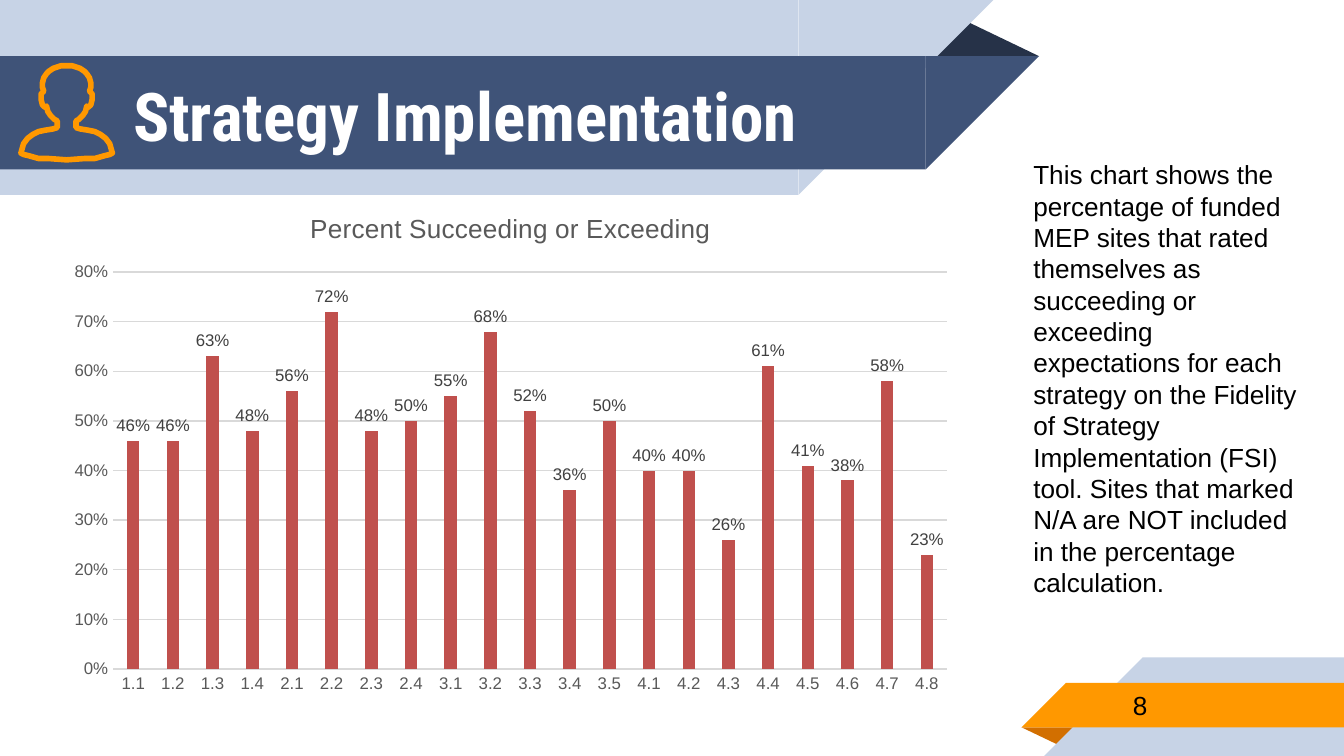
import pptx
import pptx.chart.data
import pptx.dml.color
import pptx.enum.chart
import pptx.enum.shapes
import pptx.enum.text
import pptx.util

Pt = pptx.util.Pt
RGBColor = pptx.dml.color.RGBColor
Preset = pptx.enum.shapes.MSO_SHAPE
Anchor = pptx.enum.text.MSO_ANCHOR
AutoSize = pptx.enum.text.MSO_AUTO_SIZE

WHITE = RGBColor(0xFF, 0xFF, 0xFF)
BLACK = RGBColor(0, 0, 0)
PALE_BLUE = RGBColor(0xC7, 0xD3, 0xE6)
BLUE = RGBColor(0x3F, 0x53, 0x78)
NAVY = RGBColor(0x26, 0x32, 0x48)
ORANGE = RGBColor(0xFF, 0x98, 0x00)
DARK_ORANGE = RGBColor(0xD2, 0x6F, 0x00)
RED = RGBColor(0xC0, 0x50, 0x4D)
GREY = RGBColor(0x59, 0x59, 0x59)
LABEL_GREY = RGBColor(0x40, 0x40, 0x40)
GRID_GREY = RGBColor(0xD9, 0xD9, 0xD9)

CHART_TITLE = "Percent Succeeding or Exceeding"
STRATEGIES_PER_GOAL = (4, 4, 5, 8)
PERCENTAGES = (46, 46, 63, 48, 56, 72, 48, 50, 55, 68, 52,
               36, 50, 40, 40, 26, 61, 41, 38, 58, 23)
EXPLANATION = (
    "This chart shows the percentage of funded MEP sites that rated themselves "
    "as succeeding or exceeding expectations for each strategy on the Fidelity "
    "of Strategy Implementation (FSI) tool. Sites that marked N/A are NOT "
    "included in the percentage calculation."
)
PERSON_HALF = (
    (0, 0), (4, 0), (7, 1), (10, 2), (13, 4), (15, 6), (17, 9), (18, 13),
    (18, 16), (17, 19), (19, 21), (19, 25), (18, 29), (16, 31), (15, 30),
    (14, 34), (12, 37), (9, 40), (7, 41), (7, 46), (10, 47), (16, 48),
    (21, 49), (25, 51), (29, 54), (32, 58), (34, 65), (32, 66), (28, 67),
    (21, 69), (14, 69), (0, 70),
)


def add_piece(slide, preset, left, top, width, height, color, rotation=0):
    shape = slide.shapes.add_shape(preset, Pt(left), Pt(top), Pt(width), Pt(height))
    shape.shadow.inherit = False
    shape.fill.solid()
    shape.fill.fore_color.rgb = color
    shape.line.fill.background()
    shape.rotation = rotation
    return shape


def add_fold(slide, left, top, width, height, color, rotation=0):
    fold = add_piece(slide, Preset.ISOSCELES_TRIANGLE, left, top, width, height,
                     color, rotation)
    fold.adjustments[0] = 0.32


def add_left_band(slide, left, top, width, height, color):
    body = width - height
    add_piece(slide, Preset.RECTANGLE, left, top, body, height, color)
    add_piece(slide, Preset.RIGHT_TRIANGLE, left + body, top, height, height, color, 90)


def add_right_band(slide, left, top, width, height, color):
    add_piece(slide, Preset.RECTANGLE, left + height, top, width - height, height, color)
    add_piece(slide, Preset.RIGHT_TRIANGLE, left, top, height, height, color, 270)


def add_person(slide, left, top, width):
    unit = width / 68
    mirrored = [(-x, y) for x, y in reversed(PERSON_HALF[1:-1])]
    points = [(34 + x, y) for x, y in (*PERSON_HALF, *mirrored)]
    builder = slide.shapes.build_freeform(*points[0], scale=Pt(unit))
    builder.add_line_segments(points[1:], close=True)
    person = builder.convert_to_shape(Pt(left), Pt(top))
    person.shadow.inherit = False
    person.fill.background()
    person.line.color.rgb = ORANGE
    person.line.width = Pt(3)


def add_header(slide, left, top, width, height):
    add_fold(slide, left + width - 61.2, top + 10.1, 61.2, 20, NAVY)
    add_left_band(slide, left, top, width - 24.4, height, PALE_BLUE)
    add_left_band(slide, left, top + 30.1, width, 60.7, BLUE)

    title = slide.shapes.title
    title.element.getparent().append(title.element)
    title.left, title.top = Pt(left + 64.1), Pt(top + 31)
    title.width, title.height = Pt(432.7), Pt(60.5)
    title.text = "Strategy Implementation"
    frame = title.text_frame
    frame.auto_size = AutoSize.NONE
    frame.vertical_anchor = Anchor.MIDDLE
    frame.margin_left = frame.margin_right = Pt(7.2)
    frame.margin_top = frame.margin_bottom = Pt(7.2)
    paragraph = frame.paragraphs[0]
    paragraph.alignment = pptx.enum.text.PP_ALIGN.LEFT
    paragraph.font.name = "Roboto Condensed"
    paragraph.font.size = Pt(36)
    paragraph.font.bold = True
    paragraph.font.color.rgb = WHITE

    add_person(slide, left + 11.2, top + 35.2, 49)


def add_body_text(slide, text, left, top, width, height):
    box = slide.shapes.add_textbox(Pt(left), Pt(top), Pt(width), Pt(height))
    frame = box.text_frame
    frame.word_wrap = True
    frame.text = text
    font = frame.paragraphs[0].font
    font.name = "Arial"
    font.size = Pt(14)
    font.color.rgb = BLACK
    return frame


def add_footer(slide, left, top, width, height):
    add_fold(slide, left, top + 37.4, 31, 10.1, DARK_ORANGE, 180)
    add_right_band(slide, left + 12.2, top, width - 12.2, height, PALE_BLUE)
    add_right_band(slide, left, top + 13.7, width, 23.8, ORANGE)
    frame = add_body_text(slide, "8", left + 52.6, top + 13, 117.4, 25.2)
    frame.vertical_anchor = Anchor.MIDDLE


def set_font(font, size, color):
    font.name = "Arial"
    font.size = Pt(size)
    font.bold = False
    font.color.rgb = color


def add_strategy_chart(slide, left, top, width, height):
    data = pptx.chart.data.CategoryChartData(number_format="0%")
    data.categories = [f"{goal}.{strategy}"
                       for goal, count in enumerate(STRATEGIES_PER_GOAL, 1)
                       for strategy in range(1, count + 1)]
    data.add_series(CHART_TITLE, [value / 100 for value in PERCENTAGES])
    chart = slide.shapes.add_chart(
        pptx.enum.chart.XL_CHART_TYPE.COLUMN_CLUSTERED,
        Pt(left), Pt(top), Pt(width), Pt(height), data).chart
    set_font(chart.font, 10, BLACK)
    chart.has_legend = False
    chart.has_title = True
    chart.chart_title.include_in_layout = False
    chart.chart_title.text_frame.text = CHART_TITLE
    set_font(chart.chart_title.text_frame.paragraphs[0].font, 14, GREY)

    for axis in (chart.category_axis, chart.value_axis):
        axis.major_tick_mark = pptx.enum.chart.XL_TICK_MARK.NONE
        axis.minor_tick_mark = pptx.enum.chart.XL_TICK_MARK.NONE
        set_font(axis.tick_labels.font, 9, GREY)
    values = chart.value_axis
    values.minimum_scale, values.maximum_scale, values.major_unit = 0, 0.8, 0.1
    values.tick_labels.number_format = "0%"
    values.tick_labels.number_format_is_linked = False
    values.format.line.fill.background()
    for line in (chart.category_axis.format.line, values.major_gridlines.format.line):
        line.color.rgb = GRID_GREY
        line.width = Pt(0.75)

    plot = chart.plots[0]
    plot.gap_width, plot.overlap = 219, -27
    plot.vary_by_categories = False
    fill = plot.series[0].format.fill
    fill.solid()
    fill.fore_color.rgb = RED
    plot.has_data_labels = True
    labels = plot.data_labels
    labels.show_value = True
    labels.number_format = "0%"
    labels.number_format_is_linked = False
    labels.position = pptx.enum.chart.XL_LABEL_POSITION.OUTSIDE_END
    set_font(labels.font, 9, LABEL_GREY)


def main():
    presentation = pptx.Presentation()
    presentation.slide_width, presentation.slide_height = Pt(720), Pt(405)
    slide = presentation.slides.add_slide(presentation.slide_layouts[5])
    add_header(slide, 0, 0, 556.6, 104.4)
    add_footer(slide, 547.2, 352.2, 172.8, 52.8)
    add_strategy_chart(slide, 30.2, 101.5, 486.7, 275.8)
    explanation = add_body_text(slide, EXPLANATION, 546.5, 81.4, 158.4, 244.8)
    explanation.auto_size = AutoSize.SHAPE_TO_FIT_TEXT
    presentation.save("out.pptx")


if __name__ == "__main__":
    main()
